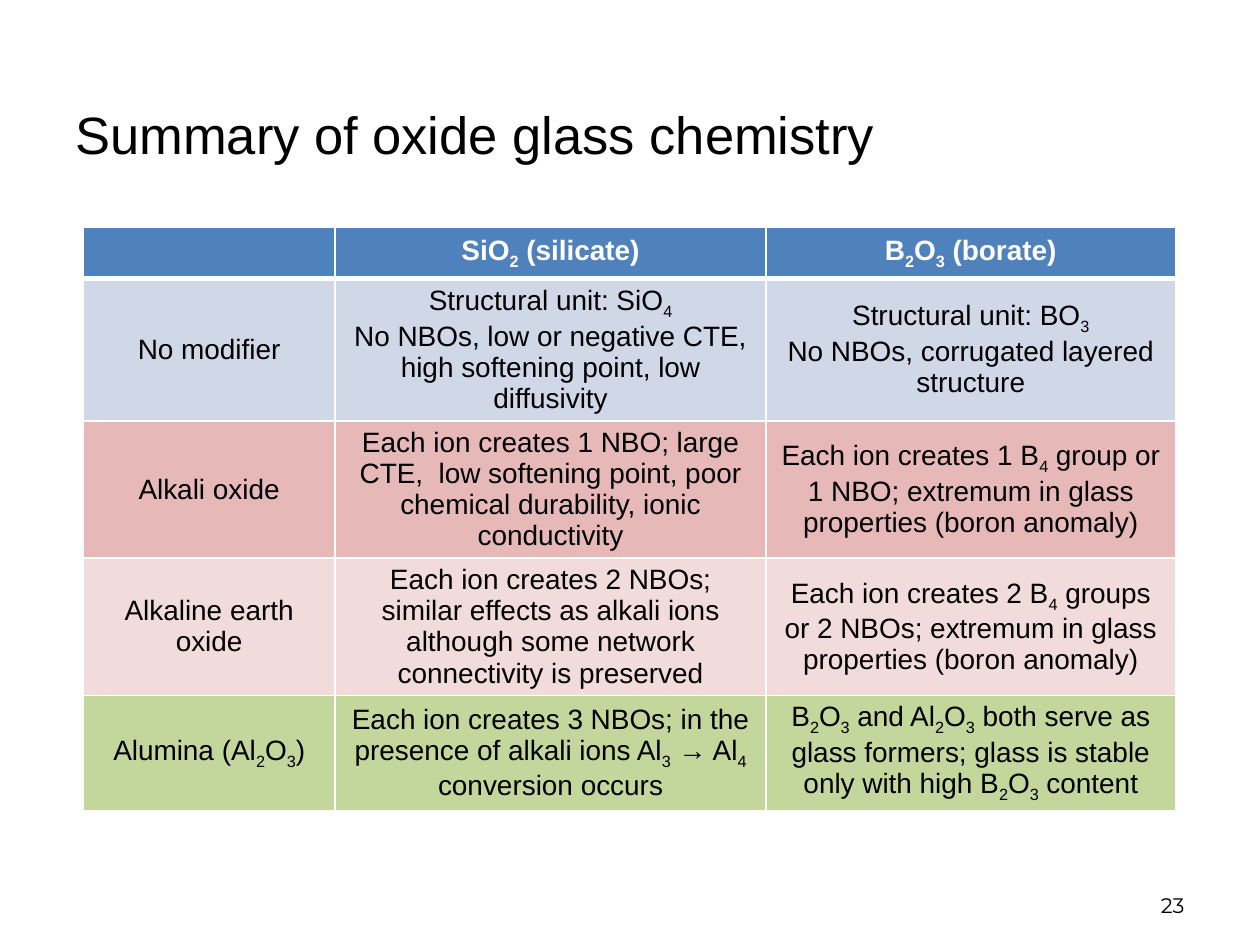
"""Build the oxide glass chemistry summary slide."""
from lxml import etree
from pptx import Presentation
from pptx import util as u
from pptx.dml.color import RGBColor
from pptx.enum import text
from pptx.oxml import ns

BLACK = RGBColor(0x00, 0x00, 0x00)
WHITE = RGBColor(0xFF, 0xFF, 0xFF)
BLUE = RGBColor(0x4F, 0x81, 0xBD)
PALE_BLUE = RGBColor(0xD0, 0xD8, 0xE8)
ROSE = RGBColor(0xE6, 0xB9, 0xB8)
PALE_ROSE = RGBColor(0xF2, 0xDC, 0xDB)
GREEN = RGBColor(0xC3, 0xD6, 0x9B)

TITLE = {"name": "Arial", "size": u.Pt(30), "bold": False}
HEADING = {"name": "Arial", "size": u.Pt(16), "bold": True}
BODY = {"name": "Arial", "size": u.Pt(16), "bold": False}
NUMBER = {"name": "Montserrat", "size": u.Pt(12), "bold": False}

COLUMN_WIDTHS = (2, 3.42, 3.25)
ROWS = (
    (0.41, BLUE, ("", "SiO_2 (silicate)", "B_2O_3 (borate)")),
    (1.13, PALE_BLUE, (
        "No modifier",
        "Structural unit: SiO_4\nNo NBOs, low or negative CTE, high softening point, low diffusivity",
        "Structural unit: BO_3\nNo NBOs, corrugated layered structure")),
    (1.09, ROSE, (
        "Alkali oxide",
        "Each ion creates 1 NBO; large CTE,  low softening point, poor chemical durability, ionic conductivity",
        "Each ion creates 1 B_4 group or 1 NBO; extremum in glass properties (boron anomaly)")),
    (1.09, PALE_ROSE, (
        "Alkaline earth oxide",
        "Each ion creates 2 NBOs; similar effects as alkali ions although some network connectivity is preserved",
        "Each ion creates 2 B_4 groups or 2 NBOs; extremum in glass properties (boron anomaly)")),
    (0.91, GREEN, (
        "Alumina (Al_2O_3)",
        "Each ion creates 3 NBOs; in the presence of alkali ions Al_3 → Al_4 conversion occurs",
        "B_2O_3 and Al_2O_3 both serve as glass formers; glass is stable only with high B_2O_3 content")),
)


class SlideBuilder:
    """Hold the current slide and add styled elements to it."""

    def __init__(self, slide):
        self.slide = slide

    def add_wording(self, paragraph, wording, style, color, subscript=False):
        """Add one run, lowered when it is a subscript."""
        run = paragraph.add_run()
        run.text = wording
        for key, value in style.items():
            setattr(run.font, key, value)
        run.font.color.rgb = color
        if subscript:
            run._r.get_or_add_rPr().set("baseline", "-25000")

    def fill_frame(self, frame, wording, style, color, align):
        """Fill a frame; an underscore lowers the next character."""
        for index, line in enumerate(wording.split("\n")):
            paragraph = frame.add_paragraph() if index else frame.paragraphs[0]
            paragraph.alignment = align
            first, *rest = line.split("_")
            if first:
                self.add_wording(paragraph, first, style, color)
            for part in rest:
                self.add_wording(paragraph, part[0], style, color, subscript=True)
                if part[1:]:
                    self.add_wording(paragraph, part[1:], style, color)

    def textbox(self, box, wording, style, align, anchor):
        """Add a wrapped text box."""
        frame = self.slide.shapes.add_textbox(*map(u.Inches, box)).text_frame
        frame.word_wrap = True
        frame.vertical_anchor = anchor
        self.fill_frame(frame, wording, style, BLACK, align)

    def border(self, cell, side, points):
        """Draw one white cell edge."""
        line = etree.SubElement(cell._tc.get_or_add_tcPr(), ns.qn(f"a:ln{side}"), w=str(u.Pt(points)))
        fill = etree.SubElement(line, ns.qn("a:solidFill"))
        etree.SubElement(fill, ns.qn("a:srgbClr"), val=str(WHITE))

    def table(self, left, top, widths, rows):
        """Add a table with a heading row and coloured rows."""
        size = sum(widths), sum(height for height, _, _ in rows)
        table = self.slide.shapes.add_table(
            len(rows), len(widths), *map(u.Inches, (left, top, *size))).table
        for column, width in zip(table.columns, widths):
            column.width = u.Inches(width)
        for index, (height, color, entries) in enumerate(rows):
            table.rows[index].height = u.Inches(height)
            heading = index == 0
            edges = {"L": 1, "R": 1, "T": 3 if index == 1 else 1, "B": 3 if heading else 1}
            for cell, entry in zip(table.rows[index].cells, entries):
                for side, points in edges.items():
                    self.border(cell, side, points)
                cell.fill.solid()
                cell.fill.fore_color.rgb = color
                cell.vertical_anchor = text.MSO_ANCHOR.MIDDLE
                self.fill_frame(cell.text_frame, entry, HEADING if heading else BODY,
                                WHITE if heading else BLACK, text.PP_ALIGN.CENTER)


def main():
    """Build and save the presentation."""
    deck = Presentation()
    deck.slide_width, deck.slide_height = u.Inches(10), u.Inches(7.5)
    builder = SlideBuilder(deck.slides.add_slide(deck.slide_layouts[6]))
    builder.table(0.66, 1.8, COLUMN_WIDTHS, ROWS)
    builder.textbox((7.17, 6.83, 2.33, 0.5), "23", NUMBER,
                    text.PP_ALIGN.RIGHT, text.MSO_ANCHOR.BOTTOM)
    builder.textbox((0.5, 0.53, 8.83, 1.06), "Summary of oxide glass chemistry", TITLE,
                    text.PP_ALIGN.LEFT, text.MSO_ANCHOR.MIDDLE)
    deck.save("out.pptx")


if __name__ == "__main__":
    main()
